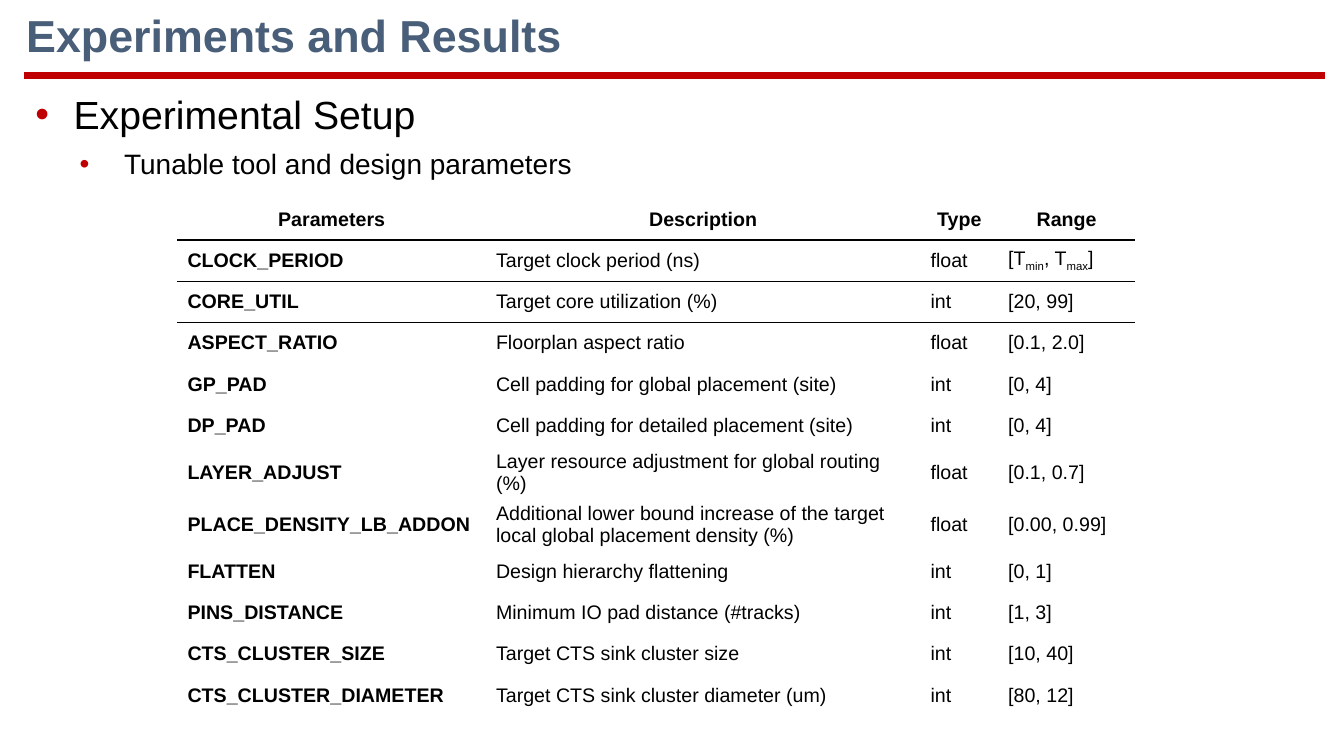
from pptx import Presentation
from pptx.dml.color import RGBColor as Rgb
from pptx.enum.text import MSO_ANCHOR as Anchor, MSO_AUTO_SIZE as Fit, PP_ALIGN as Align
from pptx.oxml import parse_xml
from pptx.oxml.ns import nsdecls
from pptx.util import Inches as In, Pt

HUES = {"title": "495E78", "red": "C00000", "ink": "000000", "paper": "FFFFFF"}
FONT = "Arial"
WIDE, HIGH = 13.33, 7.5
COLS = [3.06, 4.31, 0.77, 1.36]
ROW = 0.41
PLAIN = "{2D5ABB26-0587-4C30-8999-92F81FD0307C}"  # table style without grid
RULES = {0: 1.5, 1: 1}  # row index: width of the line under it

HEAD = ("Parameters", "Description", "Type", "Range")
DATA = [
    ("CLOCK_PERIOD", "Target clock period (ns)", "float", "[T_min_, T_max_]"),
    ("CORE_UTIL", "Target core utilization (%)", "int", "[20, 99]"),
    ("ASPECT_RATIO", "Floorplan aspect ratio", "float", "[0.1, 2.0]"),
    ("GP_PAD", "Cell padding for global placement (site)", "int", "[0, 4]"),
    ("DP_PAD", "Cell padding for detailed placement (site)", "int", "[0, 4]"),
    ("LAYER_ADJUST", "Layer resource adjustment for global routing (%)", "float", "[0.1, 0.7]"),
    ("PLACE_DENSITY_LB_ADDON",
     "Additional lower bound increase of the target local global placement density (%)",
     "float", "[0.00, 0.99]"),
    ("FLATTEN", "Design hierarchy flattening", "int", "[0, 1]"),
    ("PINS_DISTANCE", "Minimum IO pad distance (#tracks)", "int", "[1, 3]"),
    ("CTS_CLUSTER_SIZE", "Target CTS sink cluster size", "int", "[10, 40]"),
    ("CTS_CLUSTER_DIAMETER", "Target CTS sink cluster diameter (um)", "int", "[80, 12]"),
]


def hue(name):
    return Rgb.from_string(HUES[name])


def node(xml):
    return parse_xml(xml.replace(" ", f" {nsdecls('a')} ", 1))


def style(run, size, color="ink", bold=False):
    font = run.font
    font.name, font.size, font.bold = FONT, Pt(size), bold
    font.color.rgb = hue(color)


def place(shape, left, top, width, height):
    shape.left, shape.top = In(left), In(top)
    shape.width, shape.height = In(width), In(height)
    shape.text_frame.auto_size = Fit.NONE


def add_title(slide, text):
    title = slide.shapes.title
    place(title, 0.16, 0.11, 12.7, 0.54)
    title.fill.solid()
    title.fill.fore_color.rgb = hue("paper")
    title.text_frame.text = text
    title.text_frame.vertical_anchor = Anchor.MIDDLE
    para = title.text_frame.paragraphs[0]
    para.alignment, para.line_spacing = Align.LEFT, 0.9
    style(para.runs[0], 32, "title", True)


def add_rule(slide):
    line = slide.shapes.add_connector(1, In(0.24), In(HIGH / 10), In(13.14), In(HIGH / 10))
    line.line.color.rgb = hue("red")
    line.line.width = Pt(4.5)
    line._element.spPr.append(node("<a:effectLst />"))


def add_list(slide, items):
    body = slide.placeholders[1]
    place(body, 0.25, 0.92, 12.88, 3.05)
    frame = body.text_frame
    frame.text = "\n".join(text for text, size in items)
    for level, (para, (text, size)) in enumerate(zip(frame.paragraphs, items)):
        para.level = level
        para.line_spacing, para.space_before = 0.85, Pt(10)
        style(para.runs[0], size)
        # Red bullet on a hanging indent
        props = para._p.get_or_add_pPr()
        props.set("marL", str(In(0.38 + level / 2)))
        props.set("indent", str(In(-0.44 if level else -0.38)))
        props.append(node(f'<a:buClr ><a:srgbClr val="{HUES["red"]}"/></a:buClr>'))
        props.append(node(f'<a:buFont typeface="{FONT}"/>'))
        props.append(node('<a:buChar char="•"/>'))


def edge(cell, side, width):
    cell._tc.get_or_add_tcPr().insert(0, node(
        f'<a:{side} w="{Pt(width)}"><a:solidFill><a:srgbClr val="{HUES["ink"]}"/>'
        f"</a:solidFill></a:{side}>"))


def fill_cell(cell, text, bold, head):
    cell.fill.background()
    cell.vertical_anchor = Anchor.MIDDLE
    cell.margin_left = cell.margin_right = In(0.1)
    cell.margin_top = cell.margin_bottom = In(0.04)
    para = cell.text_frame.paragraphs[0]
    para.alignment = Align.CENTER if head else Align.LEFT
    # In the unbolded cells, underscores enclose subscripts
    for i, part in enumerate([text] if bold else text.split("_")):
        run = para.add_run()
        run.text = part
        style(run, 14, bold=bold)
        if i % 2:
            run.font._element.set("baseline", "-25000")


def add_grid(slide):
    rows = [HEAD, *DATA]
    frame = slide.shapes.add_table(len(rows), len(COLS), In(1.76), In(1.97),
                                   In(sum(COLS)), In(ROW * len(rows)))
    table = frame.table
    table.first_row = table.horz_banding = False
    table._tbl.tblPr[0].text = PLAIN
    for col, width in zip(table.columns, COLS):
        col.width = In(width)
    for r, row in enumerate(rows):
        table.rows[r].height = In(ROW)
        for c, text in enumerate(row):
            cell = table.cell(r, c)
            fill_cell(cell, text, r == 0 or c == 0, r == 0)
            if r in RULES:
                edge(cell, "lnB", RULES[r])
            if r - 1 in RULES:
                edge(cell, "lnT", RULES[r - 1])


def main():
    deck = Presentation()
    deck.slide_width, deck.slide_height = In(WIDE), In(HIGH)
    slide = deck.slides.add_slide(deck.slide_layouts[1])
    add_rule(slide)
    add_title(slide, "Experiments and Results")
    add_list(slide, [("Experimental Setup", 28), ("Tunable tool and design parameters", 20)])
    add_grid(slide)
    deck.save("out.pptx")


if __name__ == "__main__":
    main()
